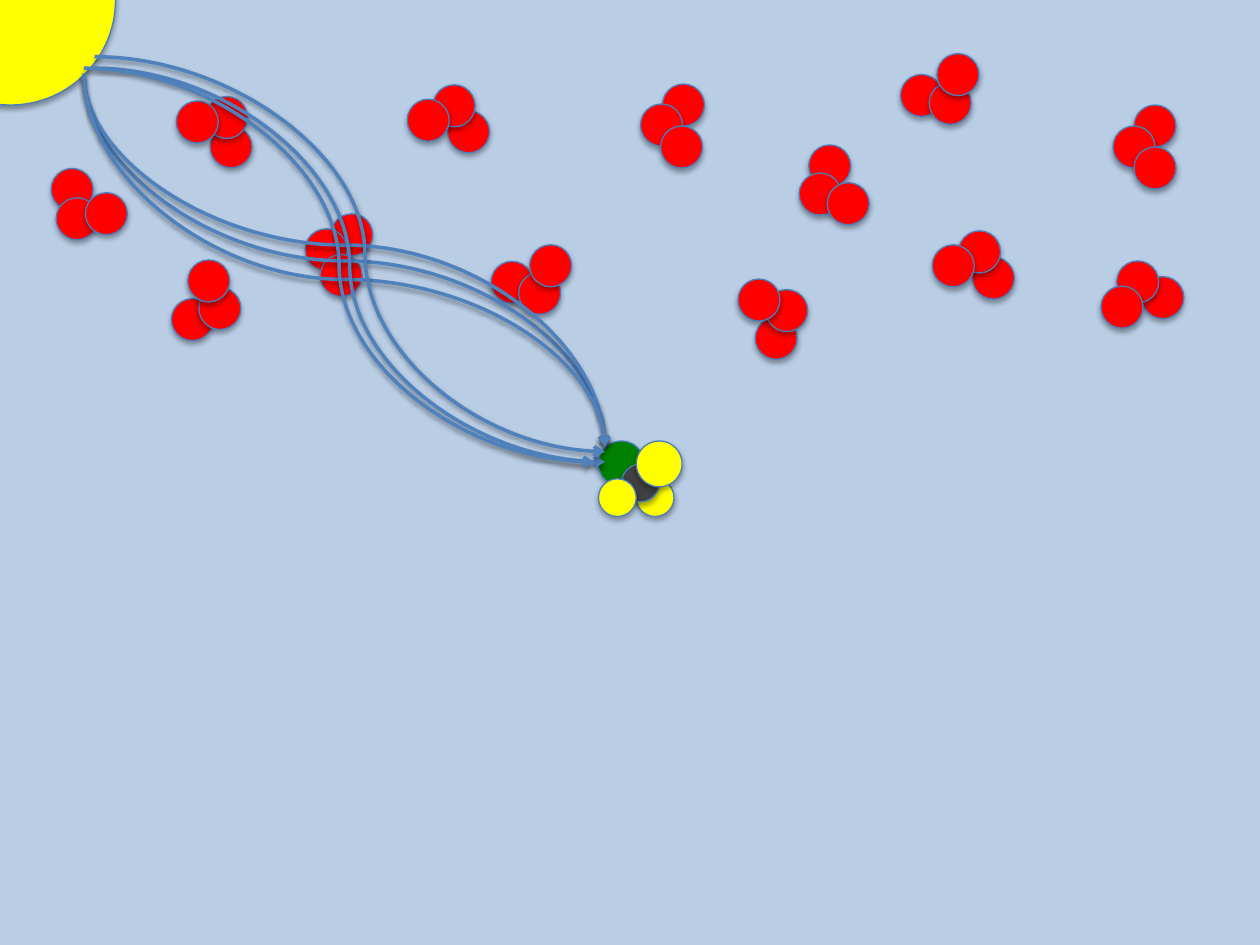
import math

from lxml import etree
from pptx import Presentation
from pptx import util as u
from pptx.dml.color import RGBColor
from pptx.enum import shapes as kinds
from pptx.oxml.ns import qn

COLORS = {
    "sky": "B9CDE5", "sun": "FFFF00", "ozone": "FF0000", "carbon": "404040",
    "green": "008000", "outline": "4B7EBC", "ray": "4F81BD", "shadow": "000000",
}
CELL = u.Inches(10) / 120  # the slide is a grid of 120 columns and 90 rows
ATOM = 4

# centre column, centre row, rotation in degrees
OZONE = [
    (92.7, 25.9, 197), (89.5, 8.1, 330.2), (73.1, 30.4, 245.8),
    (8.5, 19.2, 35.3), (42.7, 12, 195.9), (65, 12, 92.6),
    (33, 24.3, 104.7), (79.9, 17.6, 63.9), (19.1, 28.6, 292.9),
    (108.8, 28.8, 167), (50.6, 26.1, 336.7), (20.4, 12.8, 216.4),
    (110, 14, 90),
]
# start, end, position of the bend in percent, whether the ray leaves downwards
RAYS = [
    ((8, 7.1), (57.6, 42.6), 50, True),
    ((8, 7), (57.6, 42.6), 45.9, True),
    ((8, 7), (57.6, 42.6), 55.1, True),
    ((9, 6.5), (57.6, 44), 50, False),
    ((9, 5.4), (57.6, 43), 53, False),
    ((8, 6.5), (56.6, 44), 50, False),
]


def rgb(name):
    return RGBColor.from_string(COLORS[name])


def grid(cells):
    return u.Emu(round(cells * CELL))


def cast_shadow(part, opacity, distance):
    """Add a soft shadow below a part whose fill and line are already set."""
    effects = etree.SubElement(part._element.spPr, qn("a:effectLst"))
    outer = etree.SubElement(
        effects, qn("a:outerShdw"), blurRad=str(u.Pt(3.1)),
        dist=str(u.Pt(distance)), dir="5400000", rotWithShape="0")
    color = etree.SubElement(outer, qn("a:srgbClr"), val=COLORS["shadow"])
    etree.SubElement(color, qn("a:alpha"), val=str(opacity * 1000))


def add_ball(parent, left, top, diameter, color):
    ball = parent.add_shape(
        kinds.MSO_SHAPE.OVAL, *map(grid, (left, top, diameter, diameter)))
    ball.fill.solid()
    ball.fill.fore_color.rgb = rgb(color)
    ball.line.color.rgb = rgb("outline")
    ball.line.width = u.Pt(0.75)
    cast_shadow(ball, 35, 1.8)


def add_cfc(slide, left, top):
    molecule = slide.shapes.add_group_shape().shapes
    for dx, dy, diameter, color in [
            (3.6, 3.6, 3.6, "sun"), (0, 0, 4.36, "green"),
            (2.2, 2.2, 3.6, "carbon"), (3.6, 0, 4.36, "sun"),
            (0, 3.6, 3.6, "sun")]:
        add_ball(molecule, left + dx, top + dy, diameter, color)


def add_ozone(slide, column, row, degrees):
    """Three touching atoms at a right angle, turned about the given centre."""
    molecule = slide.shapes.add_group_shape().shapes
    cos, sin = math.cos(math.radians(degrees)), math.sin(math.radians(degrees))
    for x, y in [(-2, 0), (0, 2), (2, 0)]:
        add_ball(molecule, column + x * cos - y * sin - ATOM / 2,
                 row + x * sin + y * cos - ATOM / 2, ATOM, "ozone")


def add_ray(slide, start, end, bend, downwards):
    (x1, y1), (x2, y2) = start, end
    if downwards:  # mirrored, then turned by 270 degrees about the same centre
        cx, cy = (x1 + x2) / 2, (y1 + y2) / 2
        half_w, half_h = (y2 - y1) / 2, (x2 - x1) / 2
        x1, x2 = cx + half_w, cx - half_w
        y1, y2 = cy - half_h, cy + half_h
    ray = slide.shapes.add_connector(
        kinds.MSO_CONNECTOR.CURVE, *map(grid, (x1, y1, x2, y2)))
    ray.line.color.rgb = rgb("ray")
    ray.line.width = u.Pt(2)
    properties = ray._element.spPr
    if downwards:
        properties.find(qn("a:xfrm")).set("rot", str(270 * 60000))
    geometry = properties.find(qn("a:prstGeom"))
    guides = geometry.find(qn("a:avLst"))
    if guides is None:
        guides = etree.SubElement(geometry, qn("a:avLst"))
    etree.SubElement(guides, qn("a:gd"), name="adj1",
                     fmla=f"val {round(bend * 1000)}")
    etree.SubElement(properties.find(qn("a:ln")), qn("a:tailEnd"), type="arrow")
    cast_shadow(ray, 38, 1.6)


def main():
    deck = Presentation()
    deck.slide_width, deck.slide_height = grid(120), grid(90)
    slide = deck.slides.add_slide(deck.slide_layouts[6])
    slide.background.fill.solid()
    slide.background.fill.fore_color.rgb = rgb("sky")

    add_ball(slide.shapes, -9, -10, 20, "sun")
    add_cfc(slide, 57, 42)
    for molecule in OZONE:
        add_ozone(slide, *molecule)
    for ray in RAYS:
        add_ray(slide, *ray)
    deck.save("out.pptx")


if __name__ == "__main__":
    main()
